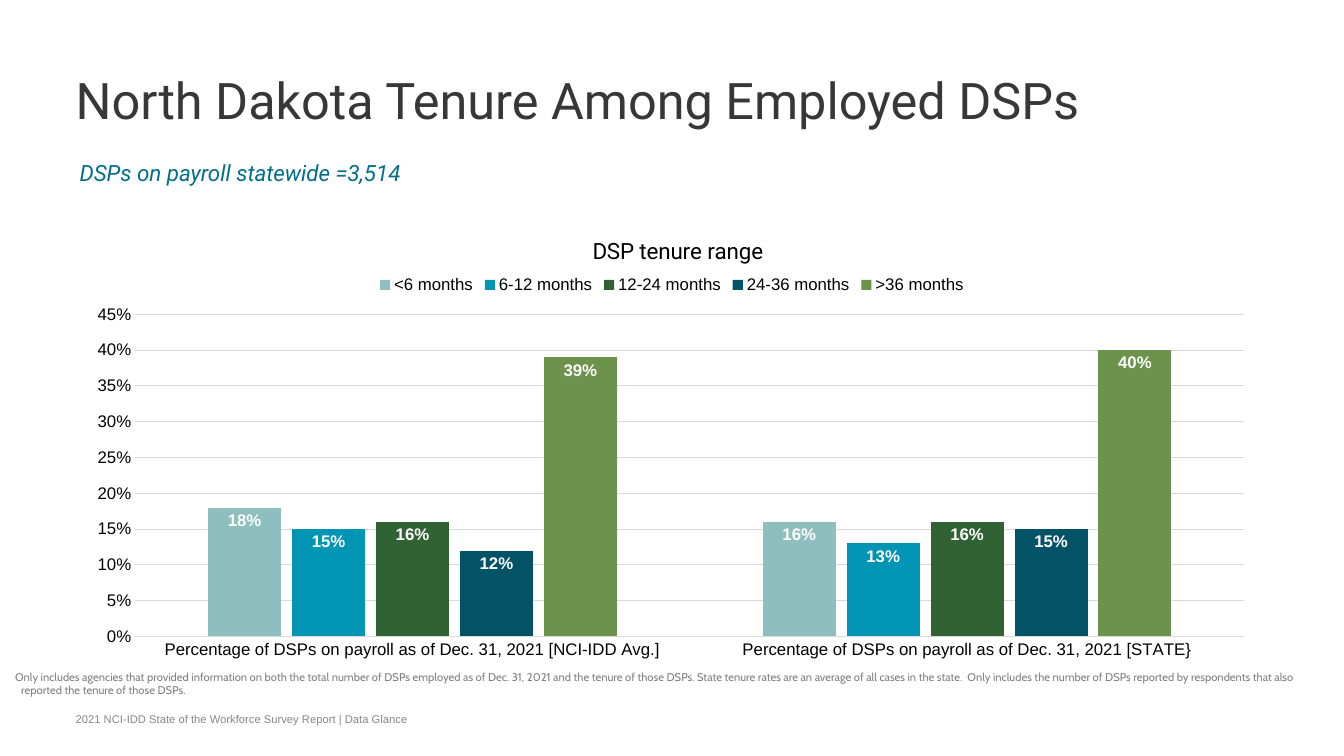
import pptx
import pptx.chart.data
import pptx.dml.color
import pptx.enum.chart
import pptx.enum.text
import pptx.oxml
import pptx.oxml.ns
import pptx.util
from pptx.util import Inches

RGBColor = pptx.dml.color.RGBColor
BLACK = RGBColor(0x00, 0x00, 0x00)
WHITE = RGBColor(0xFF, 0xFF, 0xFF)
TITLE_GRAY = RGBColor(0x37, 0x37, 0x37)
FOOTER_GRAY = RGBColor(0x87, 0x87, 0x87)
NOTE_GRAY = RGBColor(0x7F, 0x7F, 0x7F)
GRID_GRAY = RGBColor(0xD9, 0xD9, 0xD9)
TEAL = RGBColor(0x00, 0x6F, 0x88)

TENURE_SERIES = [
    ("<6 months", (0.18, 0.16), RGBColor(0x8E, 0xBE, 0xBE)),
    ("6-12 months", (0.15, 0.13), RGBColor(0x00, 0x94, 0xB5)),
    ("12-24 months", (0.16, 0.16), RGBColor(0x31, 0x62, 0x34)),
    ("24-36 months", (0.12, 0.15), RGBColor(0x01, 0x53, 0x65)),
    (">36 months", (0.39, 0.40), RGBColor(0x6C, 0x92, 0x4C)),
]


def add_text(left, top, width, height, text, font_name, size, color):
    box = slide.shapes.add_textbox(Inches(left), Inches(top), Inches(width), Inches(height))
    frame = box.text_frame
    frame.word_wrap = True
    frame.margin_left = frame.margin_top = frame.margin_right = frame.margin_bottom = 0
    paragraph = frame.paragraphs[0]
    paragraph.text = text
    style_font(paragraph.font, font_name, size, color)
    return frame


def style_font(font, name, size, color):
    font.name = name
    font.size = pptx.util.Pt(size)
    font.color.rgb = color


presentation = pptx.Presentation()
presentation.slide_width = Inches(13.33)
presentation.slide_height = Inches(7.5)
slide = presentation.slides.add_slide(presentation.slide_layouts[6])

chart_data = pptx.chart.data.CategoryChartData(number_format="0%")
chart_data.categories = [
    "Percentage of DSPs on payroll as of Dec. 31, 2021 [NCI-IDD Avg.]",
    "Percentage of DSPs on payroll as of Dec. 31, 2021 [STATE}",
]
for name, values, color in TENURE_SERIES:
    chart_data.add_series(name, values)

chart = slide.shapes.add_chart(
    pptx.enum.chart.XL_CHART_TYPE.COLUMN_CLUSTERED,
    Inches(0.75), Inches(2.13), Inches(11.83), Inches(4.5), chart_data,
).chart
style_font(chart.font, "Arial", 12, BLACK)

chart.has_title = True
chart_title = chart.chart_title.text_frame.paragraphs[0]
chart_title.text = "DSP tenure range"
style_font(chart_title.font, "Roboto", 16, BLACK)
chart_title.font.bold = False

chart.has_legend = True
chart.legend.position = pptx.enum.chart.XL_LEGEND_POSITION.TOP
chart.legend.include_in_layout = False
style_font(chart.legend.font, "Arial", 12, BLACK)

for axis in (chart.category_axis, chart.value_axis):
    axis.major_tick_mark = pptx.enum.chart.XL_TICK_MARK.NONE
    axis.minor_tick_mark = pptx.enum.chart.XL_TICK_MARK.NONE
    style_font(axis.tick_labels.font, "Arial", 12, BLACK)

value_axis = chart.value_axis
value_axis.minimum_scale = 0
value_axis.maximum_scale = 0.45
value_axis.major_unit = 0.05
value_axis.tick_labels.number_format = "0%"
value_axis.tick_labels.number_format_is_linked = False
value_axis.format.line.fill.background()
for line in (chart.category_axis.format.line, value_axis.major_gridlines.format.line):
    line.color.rgb = GRID_GRAY
    line.width = pptx.util.Pt(0.75)

plot = chart.plots[0]
plot.gap_width = 200
plot.overlap = -15
plot.vary_by_categories = False
for series, (name, values, color) in zip(plot.series, TENURE_SERIES):
    series.format.fill.solid()
    series.format.fill.fore_color.rgb = color
    labels = series.data_labels
    labels.show_value = True
    labels.position = pptx.enum.chart.XL_LABEL_POSITION.INSIDE_END
    labels.number_format = "0%"
    labels.number_format_is_linked = False
    style_font(labels.font, "Arial", 12, WHITE)
    labels.font.bold = True

chart_xml = chart.element.find(pptx.oxml.ns.qn("c:chart"))
for tag, index, settings in [
    ("c:title", 1, [("xMode", "edge"), ("yMode", "edge"), ("x", 0.43), ("y", 0.04)]),
    ("c:plotArea", 0, [("layoutTarget", "inner"), ("xMode", "edge"), ("yMode", "edge"),
                       ("x", 0.05), ("y", 0.22), ("w", 0.93), ("h", 0.71)]),
    ("c:legend", 1, [("xMode", "edge"), ("yMode", "edge"),
                     ("x", 0.25), ("y", 0.13), ("w", 0.5), ("h", 0.05)]),
]:
    part = chart_xml.find(pptx.oxml.ns.qn(tag))
    for old_layout in part.findall(pptx.oxml.ns.qn("c:layout")):
        part.remove(old_layout)
    items = "".join(f'<c:{key} val="{value}"/>' for key, value in settings)
    part.insert(index, pptx.oxml.parse_xml(
        f'<c:layout {pptx.oxml.ns.nsdecls("c")}><c:manualLayout>{items}</c:manualLayout></c:layout>'
    ))

title = add_text(0.75, 0.75, 11.83, 1.2, "North Dakota Tenure Among Employed DSPs",
                 "Roboto", 36, TITLE_GRAY)
title.paragraphs[0].line_spacing = 0.9

footer = add_text(0.75, 7.05, 7.86, 0.15,
                  "2021 NCI-IDD State of the Workforce Survey Report | Data Glance",
                  "Arial", 8, FOOTER_GRAY)
footer.vertical_anchor = pptx.enum.text.MSO_ANCHOR.BOTTOM

subtitle = add_text(0.79, 1.45, 11.75, 0.92, "DSPs on payroll statewide =3,514",
                    "Roboto", 16, TEAL)
subtitle.paragraphs[0].line_spacing = 1.5
subtitle.paragraphs[0].font.italic = True

note = add_text(
    0.15, 6.65, 12.95, 0.53,
    "Only includes agencies that provided information on both the total number of DSPs "
    "employed as of Dec. 31, 2021 and the tenure of those DSPs. State tenure rates are an "
    "average of all cases in the state.  Only includes the number of DSPs reported by "
    "respondents that also reported the tenure of those DSPs.",
    "Cabin", 8, NOTE_GRAY,
)
note.paragraphs[0].space_after = pptx.util.Pt(6)
note_properties = note.paragraphs[0]._p.get_or_add_pPr()
note_properties.set("marL", str(Inches(0.06)))
note_properties.set("indent", str(Inches(-0.06)))

presentation.save("out.pptx")
